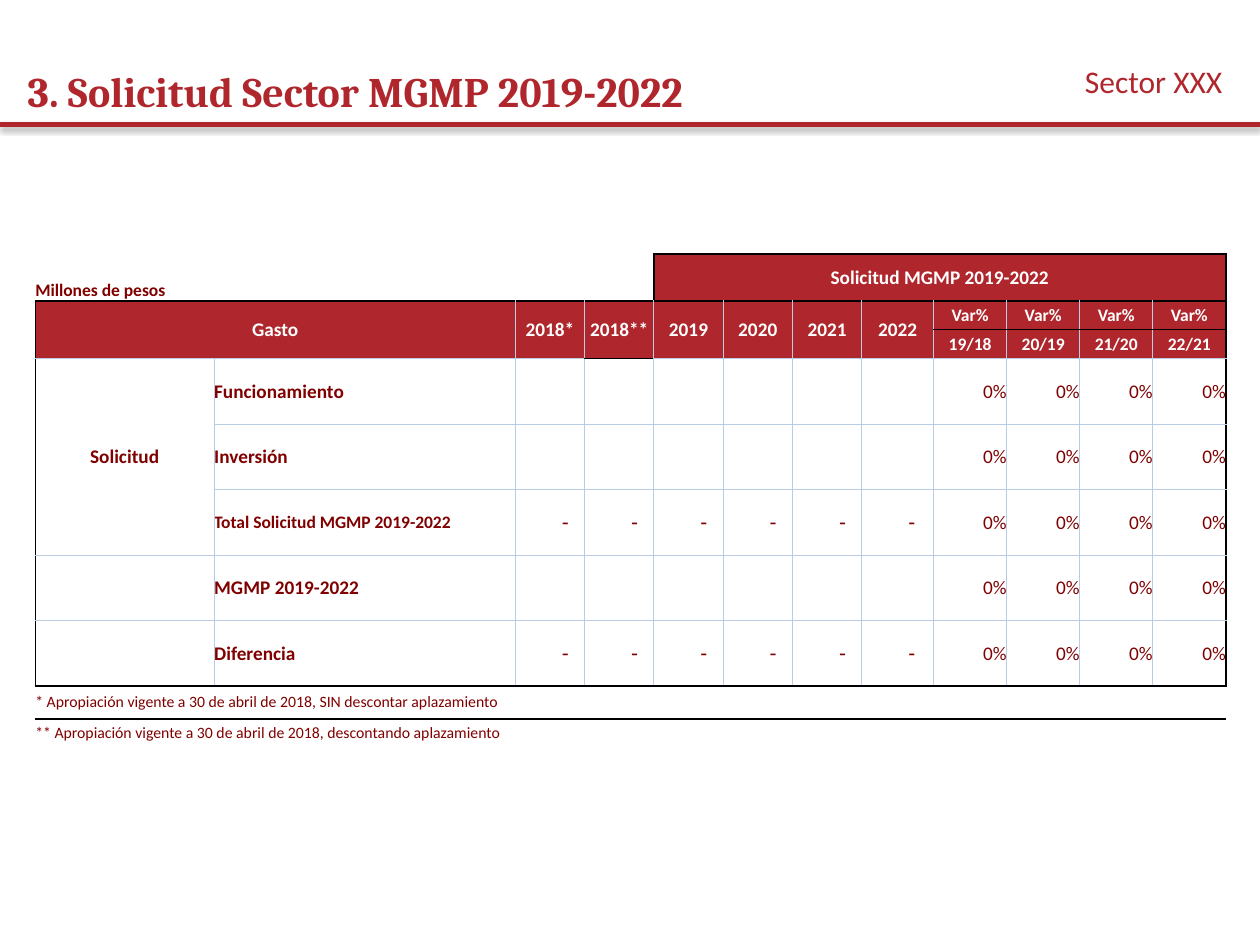
from typing import NamedTuple, Optional

from lxml import etree
from pptx import Presentation
from pptx.dml.color import RGBColor
from pptx.enum.shapes import MSO_CONNECTOR
from pptx.enum.text import MSO_ANCHOR, MSO_AUTO_SIZE, PP_ALIGN
from pptx.oxml.ns import qn
from pptx.util import Inches, Pt

LEFT, MID, RIGHT = PP_ALIGN.LEFT, PP_ALIGN.CENTER, PP_ALIGN.RIGHT
TOP, CENTER, LOW = MSO_ANCHOR.TOP, MSO_ANCHOR.MIDDLE, MSO_ANCHOR.BOTTOM
NO_FIT, GROW = MSO_AUTO_SIZE.NONE, MSO_AUTO_SIZE.SHAPE_TO_FIT_TEXT
STRAIGHT = MSO_CONNECTOR.STRAIGHT

WIDE, HIGH = 10, 7.5
COLORS = {"red": "AF272D", "wine": "800000", "white": "FFFFFF",
          "pale": "B8CCE4", "black": "000000"}
WIDTHS = {"pale": 0.5, "black": 1}
COLS = [1.42, 2.39] + [0.55] * 5 + [0.57] + [0.58] * 4
ROWS = [0.37, 0.23, 0.23] + [0.52] * 5 + [0.26, 0.23]
NO_GRID = "{2D5ABB26-0587-4C30-8999-92F81FD0307C}"
DASH_GAP = 0.37  # inset of the dash that stands for zero


class Area(NamedTuple):
    """Shares of the slide's width and height."""
    x: float
    y: float
    w: float
    h: float


class Style(NamedTuple):
    size: float = 11
    color: str = "wine"
    bold: bool = True
    font: str = "Calibri"
    align: PP_ALIGN = LEFT
    anchor: MSO_ANCHOR = CENTER
    fill: Optional[str] = None
    gap: float = 0


class Entry(NamedTuple):
    row: int
    col: int
    text: str
    style: Style
    down: int = 1
    over: int = 1


HEAD = Style(color="white", align=MID, fill="red")
VAR = HEAD._replace(size=10)
NAME = Style()
RATE = Style(bold=False, align=RIGHT)
DASH = Style(size=12, bold=False, font="Arial", gap=DASH_GAP)
NOTE = Style(size=9, bold=False)


def rgb(name: str) -> RGBColor:
    return RGBColor.from_string(COLORS[name])


def write(para, text: str, style: Style) -> None:
    para.alignment = style.align
    run = para.add_run()
    run.text = text
    form = {"size": Pt(style.size), "bold": style.bold, "name": style.font}
    for key, value in form.items():
        setattr(run.font, key, value)
    run.font.color.rgb = rgb(style.color)


def place(shape, area: Area) -> None:
    form = {"left": area.x * WIDE, "top": area.y * HIGH,
            "width": area.w * WIDE, "height": area.h * HIGH}
    for key, value in form.items():
        setattr(shape, key, Inches(value))


def fill_box(shape, area: Area, text: str, style: Style, fit) -> None:
    place(shape, area)
    frame = shape.text_frame
    form = {"word_wrap": True, "auto_size": fit, "vertical_anchor": style.anchor}
    for key, value in form.items():
        setattr(frame, key, value)
    write(frame.paragraphs[0], text, style)


def add_rule(slide, y: float) -> None:
    line = slide.shapes.add_connector(
        STRAIGHT, 0, Inches(y * HIGH), Inches(WIDE), Inches(y * HIGH))
    line.line.color.rgb = rgb("red")
    line.line.width = Pt(3)
    effects = etree.SubElement(line._element.spPr, qn("a:effectLst"))
    shadow = etree.SubElement(
        effects, qn("a:outerShdw"), blurRad=str(Pt(3.1)), dist=str(Pt(1.8)),
        dir="5400000", rotWithShape="0")
    color = etree.SubElement(shadow, qn("a:srgbClr"), val=COLORS["black"])
    etree.SubElement(color, qn("a:alpha"), val="35000")


def flat(row: int, col: int) -> Optional[str]:
    """Colour of the grid line above a row."""
    if row == 0:
        return "black" if col >= 4 else None
    if row in (1, 8) or (row, col) == (3, 3):
        return "black"
    return "pale" if 3 <= row <= 7 else None


def upright(row: int, col: int) -> Optional[str]:
    """Colour of the grid line left of a column."""
    if row == 0:
        return "black" if col in (4, len(COLS)) else None
    if row > 7:
        return None
    return "black" if col in (0, len(COLS)) else "pale"


def edge(cell, side: str, name: Optional[str]) -> None:
    if name is None:
        return
    line = etree.SubElement(cell._tc.get_or_add_tcPr(), qn("a:" + side),
                            w=str(Pt(WIDTHS[name])))
    solid = etree.SubElement(line, qn("a:solidFill"))
    etree.SubElement(solid, qn("a:srgbClr"), val=COLORS[name])


def entries() -> list[Entry]:
    items = [
        Entry(0, 0, "Millones de pesos", Style(size=10, anchor=LOW), over=2),
        Entry(0, 4, "Solicitud MGMP 2019-2022", HEAD, over=8),
        Entry(1, 0, "Gasto", HEAD, 2, 2),
        Entry(3, 0, "Solicitud", Style(align=MID), down=3),
        Entry(8, 0, "* Apropiación vigente a 30 de abril de 2018, "
              "SIN descontar aplazamiento", NOTE, over=3),
        Entry(9, 0, "** Apropiación vigente a 30 de abril de 2018, "
              "descontando aplazamiento", NOTE, over=3),
    ]
    years = ["2018*", "2018**", "2019", "2020", "2021", "2022"]
    items += [Entry(1, c, year, HEAD, down=2) for c, year in enumerate(years, 2)]
    for k in range(4):
        items += [Entry(1, 8 + k, "Var%", VAR),
                  Entry(2, 8 + k, f"{19 + k}/{18 + k}", VAR)]
    names = ["Funcionamiento", "Inversión", "Total Solicitud MGMP 2019-2022",
             "MGMP 2019-2022", "Diferencia"]
    for r, name in enumerate(names, 3):
        items.append(Entry(r, 1, name, NAME._replace(size=10 if r == 5 else 11)))
        items += [Entry(r, c, "0%", RATE) for c in range(8, 12)]
        if r in (5, 7):
            items += [Entry(r, c, "-", DASH) for c in range(2, 8)]
    return items


def add_grid(slide, area: Area) -> None:
    frame = slide.shapes.add_table(len(ROWS), len(COLS), 0, 0, 0, 0)
    place(frame, area)
    table = frame.table
    table.first_row = table.horz_banding = False
    table._tbl.tblPr.find(qn("a:tableStyleId")).text = NO_GRID
    for part, sizes in ((table.columns, COLS), (table.rows, ROWS)):
        for item, size in zip(part, sizes):
            setattr(item, "width" if sizes is COLS else "height", Inches(size))

    # Each cell belongs to one block: its own, or the span that covers it
    items = entries()
    blocks = {(r, c): Entry(r, c, "", NOTE)
              for r in range(len(ROWS)) for c in range(len(COLS))}
    for it in items:
        for r in range(it.row, it.row + it.down):
            for c in range(it.col, it.col + it.over):
                blocks[r, c] = it
        if it.down * it.over > 1:
            table.cell(it.row, it.col).merge(
                table.cell(it.row + it.down - 1, it.col + it.over - 1))

    for (r, c), it in blocks.items():
        cell, style = table.cell(r, c), it.style
        form = {"margin_left": Inches(style.gap), "margin_right": 0,
                "margin_top": 0, "margin_bottom": 0,
                "vertical_anchor": style.anchor}
        for key, value in form.items():
            setattr(cell, key, value)
        edge(cell, "lnL", upright(it.row, it.col))
        edge(cell, "lnR", upright(it.row, it.col + it.over))
        edge(cell, "lnT", flat(it.row, it.col))
        edge(cell, "lnB", flat(it.row + it.down, it.col))
        if style.fill:
            cell.fill.solid()
            cell.fill.fore_color.rgb = rgb(style.fill)
        else:
            cell.fill.background()
        para = cell.text_frame.paragraphs[0]
        if it.text and (r, c) == (it.row, it.col):
            write(para, it.text, style)
        else:  # keeps the empty line lower than its row
            etree.SubElement(para._p, qn("a:endParaRPr"), sz="900")


def main() -> None:
    deck = Presentation()
    deck.slide_width, deck.slide_height = Inches(WIDE), Inches(HIGH)
    slide = deck.slides.add_slide(deck.slide_layouts[5])

    # Heading
    add_rule(slide, 0.132)
    fill_box(slide.shapes.title, Area(0.012, 0.059, 0.85, 0.073),
             "3. Solicitud Sector MGMP 2019-2022",
             Style(24, "red", font="Cambria"), NO_FIT)
    fill_box(slide.shapes.add_textbox(0, 0, 0, 0),
             Area(0.689, 0.059, 0.291, 0.053), "Sector XXX",
             Style(18, "red", False, align=RIGHT, anchor=TOP), GROW)

    # Budget request
    add_grid(slide, Area(0.028, 0.269, 0.945, 0.525))
    deck.save("out.pptx")


if __name__ == "__main__":
    main()
